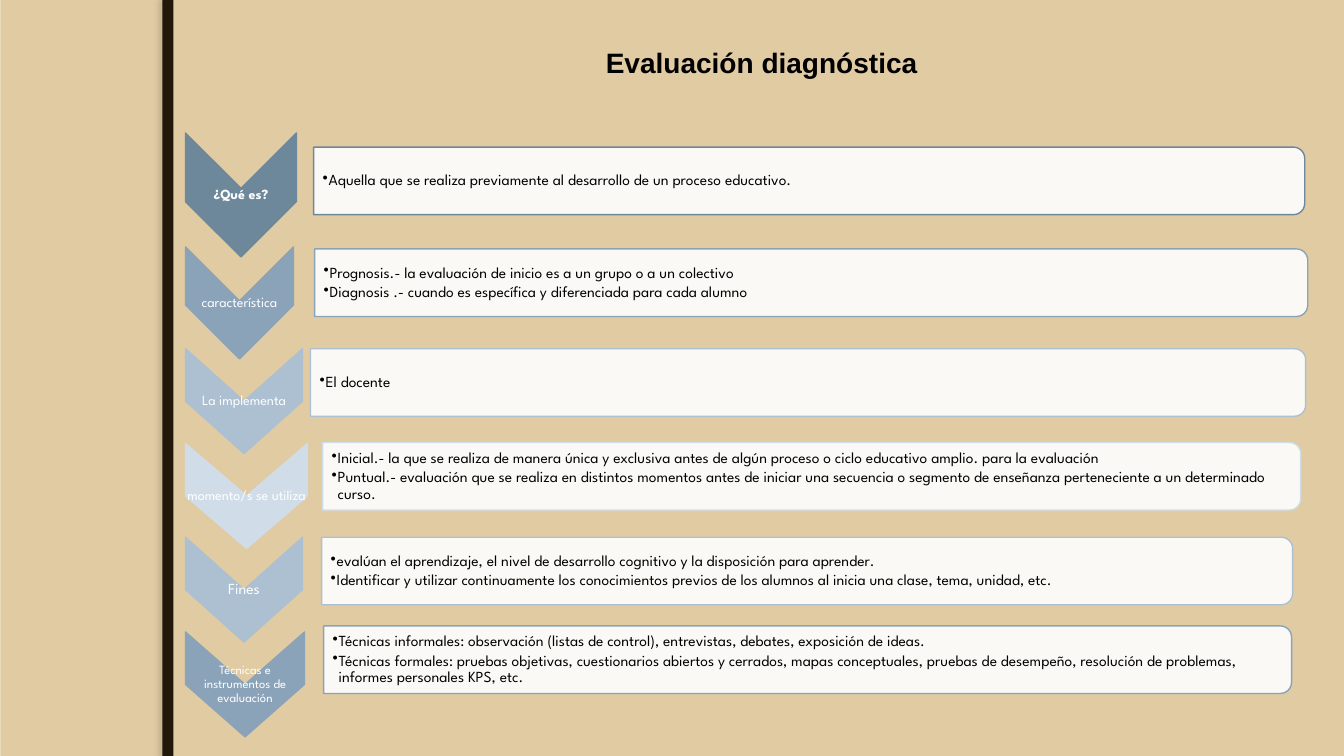
from lxml import etree
from pptx import Presentation
from pptx.dml.color import RGBColor
from pptx.enum.shapes import MSO_SHAPE
from pptx.enum.text import MSO_ANCHOR, PP_ALIGN
from pptx.oxml.ns import qn
from pptx.util import Inches, Pt

RECTANGLE = MSO_SHAPE.RECTANGLE
CHEVRON = MSO_SHAPE.CHEVRON
ROUNDED_SIDE = MSO_SHAPE.ROUND_2_SAME_RECTANGLE
MIDDLE = MSO_ANCHOR.MIDDLE
CENTER = PP_ALIGN.CENTER
LEFT = PP_ALIGN.LEFT
BODY_FONT = "League Spartan"

CHEVRON_LEFT = 1.84
PANEL_HEIGHT = 0.67

# label, label size, bold, colour, chevron (top, width, height), panel (left, top, width), points
ROWS = [
    ("¿Qué es?", 10, True, "6D879B", (1.32, 1.1, 1.23), (3.11, 1.46, 9.83),
     ["Aquella que se realiza previamente al desarrollo de un proceso educativo."]),
    ("característica", 10, False, "8BA3B9", (2.45, 1.07, 1.11), (3.12, 2.47, 9.85),
     ["Prognosis.- la evaluación de inicio es a un grupo o a un colectivo",
      "Diagnosis .- cuando es específica y diferenciada para cada alumno"]),
    ("La implementa", 10, False, "ACC0D2", (3.46, 1.16, 1.04), (3.08, 3.46, 9.87),
     ["El docente"]),
    ("momento/s se utiliza", 10, False, "D0DDE9", (4.4, 1.21, 1.04), (3.2, 4.39, 9.7),
     ["Inicial.- la que se realiza de manera única y exclusiva antes de algún proceso "
      "o ciclo educativo amplio. para la evaluación",
      "Puntual.- evaluación que se realiza en distintos momentos antes de iniciar una "
      "secuencia o segmento de enseñanza perteneciente a un determinado curso."]),
    ("Fines", 11, False, "ACC0D2", (5.33, 1.16, 1.04), (3.19, 5.33, 9.63),
     ["evalúan el aprendizaje, el nivel de desarrollo cognitivo y la disposición para aprender.",
      "Identificar y utilizar continuamente los conocimientos previos de los alumnos al "
      "inicia una clase, tema, unidad, etc."]),
    ("Técnicas e instrumentos de evaluación", 9, False, "8BA3B9", (6.27, 1.18, 1.04),
     (3.21, 6.21, 9.6),
     ["Técnicas informales: observación (listas de control), entrevistas, debates, "
      "exposición de ideas.",
      "Técnicas formales: pruebas objetivas, cuestionarios abiertos y cerrados, mapas "
      "conceptuales, pruebas de desempeño, resolución de problemas, informes personales "
      "KPS, etc."]),
]


def color(value):
    return RGBColor.from_string(value)


def add_block(page, kind, left, top, width, height, fill, line=None):
    shape = page.shapes.add_shape(kind, Inches(left), Inches(top), Inches(width), Inches(height))
    shape.shadow.inherit = False
    shape.fill.solid()
    shape.fill.fore_color.rgb = color(fill)
    if line:
        shape.line.color.rgb = color(line)
        shape.line.width = Pt(1)
    else:
        shape.line.fill.background()
    return shape


def add_turned_block(page, kind, left, top, width, height, fill, line):
    """Fill the given box with a shape turned by 90 degrees."""
    shift = (width - height) / 2
    shape = add_block(page, kind, left + shift, top - shift, height, width, fill, line)
    shape.rotation = 90
    return shape


def add_text(page, left, top, width, height, lines, size, hue,
             font=BODY_FONT, bold=False, align=CENTER, inset=0.01, bullets=False):
    box = page.shapes.add_textbox(Inches(left), Inches(top), Inches(width), Inches(height))
    frame = box.text_frame
    frame.word_wrap = True
    frame.vertical_anchor = MIDDLE
    frame.margin_left = Inches(inset)
    frame.margin_right = frame.margin_top = frame.margin_bottom = Inches(0.01)
    for index, line in enumerate(lines):
        para = frame.add_paragraph() if index else frame.paragraphs[0]
        para.alignment = align
        para.line_spacing = 0.9
        if bullets:
            para.level = 1
            para.space_after = Pt(1.8)
            properties = para._p.get_or_add_pPr()
            properties.set("marL", str(Inches(0.06)))
            properties.set("indent", str(Inches(-0.06)))
            etree.SubElement(properties, qn("a:buChar")).set("char", "•")
        span = para.add_run()
        span.text = line
        span.font.name = font
        span.font.size = Pt(size)
        span.font.bold = bold
        span.font.color.rgb = color(hue)


def add_backdrop(page):
    page.background.fill.solid()
    page.background.fill.fore_color.rgb = color("EBDDC3")
    add_block(page, RECTANGLE, 0.01, 0, 13.32, 7.5, "E0CBA3")
    # Dark bar with a soft shadow to its left
    bar = add_block(page, RECTANGLE, 1.61, 0, 0.11, 7.5, "20190B")
    effects = bar._element.spPr.find(qn("a:effectLst"))
    shadow = etree.SubElement(effects, qn("a:outerShdw"), blurRad=str(Pt(3)),
                              dist=str(Pt(3)), dir="10800000", rotWithShape="0")
    tint = etree.SubElement(shadow, qn("a:srgbClr"), val="766E60")
    etree.SubElement(tint, qn("a:alpha"), val="25000")


def add_chevron(page, left, top, width, height, label, size, bold, hue):
    add_turned_block(page, CHEVRON, left, top, width, height, hue, hue)
    # The label sits between the notch and the point when there is room
    label_height = height - width if height > width else height
    add_text(page, left, top + (height - label_height) / 2, width, label_height,
             [label], size, "FFFFFF", bold=bold)


def add_panel(page, left, top, width, height, points, hue):
    panel = add_turned_block(page, ROUNDED_SIDE, left, top, width, height, "FFFFFF", hue)
    fill = panel._element.spPr.find(qn("a:solidFill"))
    etree.SubElement(fill[0], qn("a:alpha"), val="90000")
    add_text(page, left, top + 0.03, width - 0.03, height - 0.06, points, 11, "000000",
             align=LEFT, inset=0.09, bullets=True)


def main():
    deck = Presentation()
    deck.slide_width = Inches(13.33)
    deck.slide_height = Inches(7.5)
    page = deck.slides.add_slide(deck.slide_layouts[6])
    add_backdrop(page)
    # Title
    add_text(page, 2.09, 0.3, 10.93, 0.67, ["Evaluación diagnóstica"], 20, "000000",
             font="Arial", bold=True)
    # Chevron list
    for label, size, bold, hue, (top, width, height), panel, points in ROWS:
        add_chevron(page, CHEVRON_LEFT, top, width, height, label, size, bold, hue)
        add_panel(page, *panel, PANEL_HEIGHT, points, hue)
    deck.save("out.pptx")


if __name__ == "__main__":
    main()
